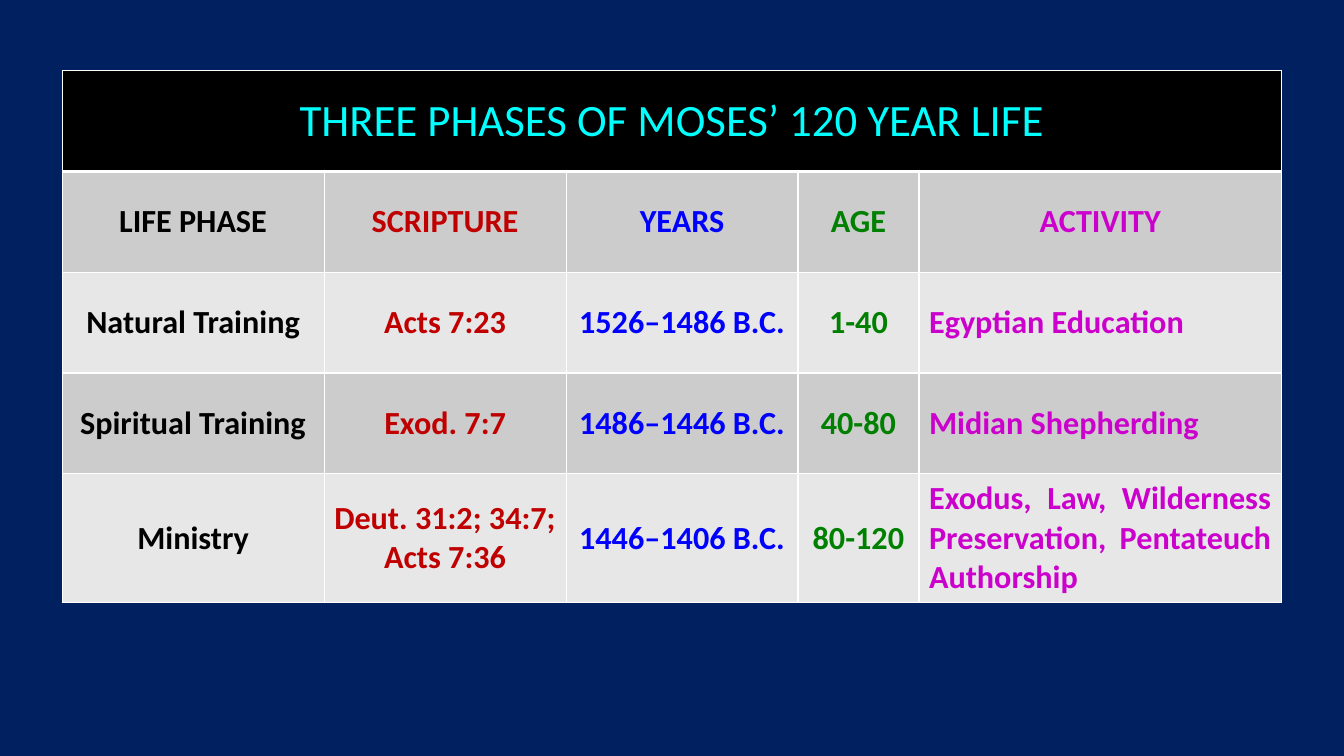
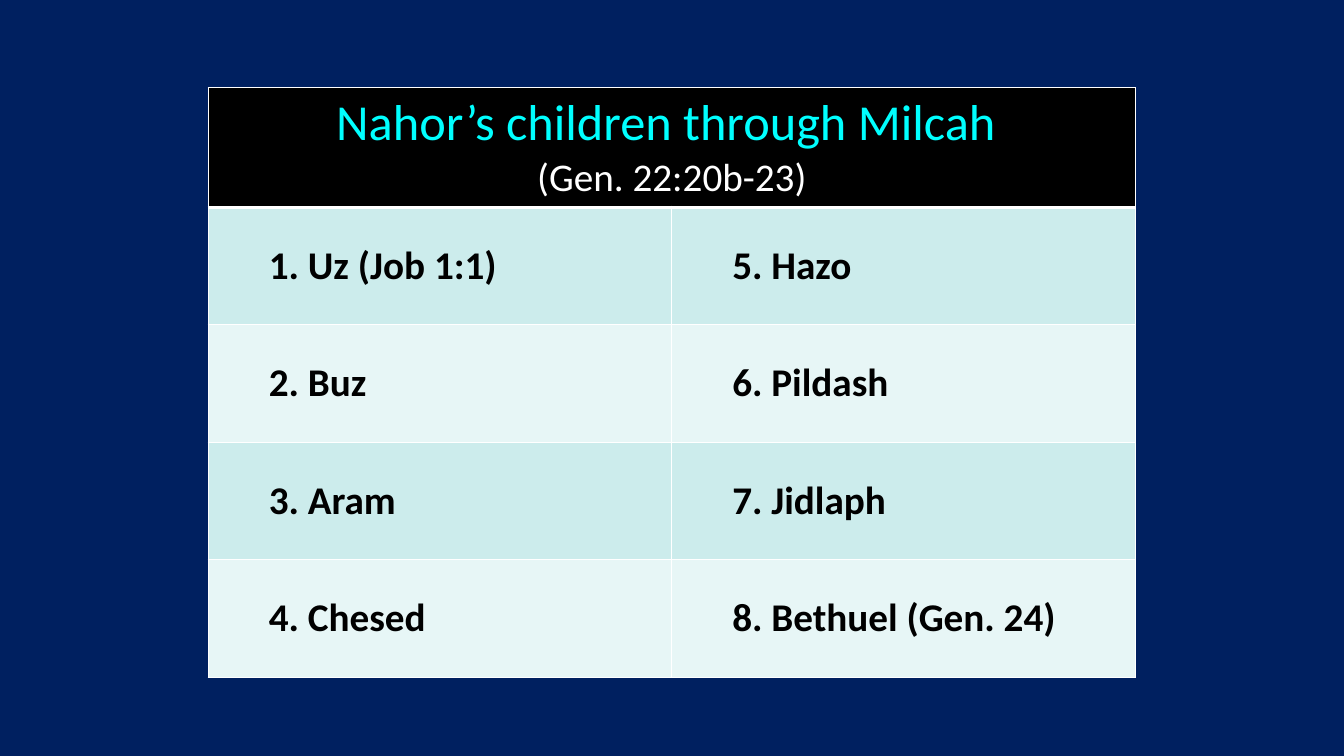
from dataclasses import dataclass

from lxml.etree import SubElement
from pptx import Presentation
from pptx.dml.color import RGBColor
from pptx.enum.text import MSO_ANCHOR as Anchor, PP_ALIGN as Align
from pptx.oxml.ns import qn
from pptx.util import Cm, Pt

NAVY = RGBColor(0x00, 0x20, 0x60)
BLACK = RGBColor(0x00, 0x00, 0x00)
WHITE = RGBColor(0xFF, 0xFF, 0xFF)
CYAN = RGBColor(0x00, 0xFF, 0xFF)
RED = RGBColor(0xC0, 0x00, 0x00)
BLUE = RGBColor(0x00, 0x00, 0xFF)
GREEN = RGBColor(0x00, 0x80, 0x00)
MAGENTA = RGBColor(0xCC, 0x00, 0xCC)
GREY_BANDS = (RGBColor(0xCC, 0xCC, 0xCC), RGBColor(0xE7, 0xE7, 0xE7))
TEAL_BANDS = (RGBColor(0xCC, 0xEC, 0xEC), RGBColor(0xE7, 0xF6, 0xF6))

FONT = "Calibri"
THIN, THICK = Pt(1), Pt(3)
BLANK_LAYOUT = 6


@dataclass(frozen=True)
class HeadingLine:
    text: str
    size: int
    color: RGBColor


@dataclass(frozen=True)
class Column:
    width: float
    color: RGBColor = BLACK
    align: Align = Align.CENTER


@dataclass(frozen=True)
class TableSpec:
    """One slide's table; lengths are in centimetres, sizes in points."""
    left: float
    top: float
    row_height: float
    columns: tuple[Column, ...]
    heading: tuple[HeadingLine, ...]
    rows: tuple[tuple[str, ...], ...]
    bands: tuple[RGBColor, RGBColor]
    text_size: int
    indent: float = 0
    space_after: int = 0
    has_labels: bool = False


MOSES = TableSpec(
    left=1.57, top=1.78, row_height=2.54,
    columns=(Column(6.6), Column(6.1, RED), Column(5.84, BLUE),
             Column(3.05, GREEN), Column(9.14, MAGENTA, Align.JUSTIFY)),
    heading=(HeadingLine("THREE PHASES OF MOSES’ 120 YEAR LIFE", 32, CYAN),),
    rows=(
        ("LIFE PHASE", "SCRIPTURE", "YEARS", "AGE", "ACTIVITY"),
        ("Natural Training", "Acts 7:23", "1526–1486 B.C.", "1-40",
         "Egyptian Education"),
        ("Spiritual Training", "Exod. 7:7", "1486–1446 B.C.", "40-80",
         "Midian Shepherding"),
        ("Ministry", "Deut. 31:2; 34:7; \nActs 7:36", "1446–1406 B.C.", "80-120",
         "Exodus, Law, Wilderness Preservation, Pentateuch Authorship"),
    ),
    bands=GREY_BANDS, text_size=23, has_labels=True,
)

NAHOR = TableSpec(
    left=5.25, top=2.21, row_height=2.96,
    columns=(Column(11.68, align=Align.LEFT),) * 2,
    heading=(HeadingLine("Nahor’s children through Milcah ", 36, CYAN),
             HeadingLine("(Gen. 22:20b-23)", 28, WHITE)),
    rows=(
        ("1. Uz (Job 1:1)", "5. Hazo"),
        ("2. Buz", "6. Pildash"),
        ("3. Aram", "7. Jidlaph"),
        ("4. Chesed", "8. Bethuel (Gen. 24)"),
    ),
    bands=TEAL_BANDS, text_size=28, indent=1.27, space_after=12,
)


def style_cell(cell, fill: RGBColor, top: int = THIN, bottom: int = THIN) -> None:
    """Set borders before the fill, as the schema orders them."""
    properties = cell._tc.get_or_add_tcPr()
    for side, width in (("L", THIN), ("R", THIN), ("T", top), ("B", bottom)):
        border = SubElement(properties, qn(f"a:ln{side}"), w=str(width))
        solid = SubElement(border, qn("a:solidFill"))
        SubElement(solid, qn("a:srgbClr"), val=str(WHITE))
    cell.fill.solid()
    cell.fill.fore_color.rgb = fill
    cell.vertical_anchor = Anchor.MIDDLE


def write_heading(cell, lines: tuple[HeadingLine, ...]) -> None:
    paragraph = cell.text_frame.paragraphs[0]
    paragraph.alignment = Align.CENTER
    paragraph.font.name = FONT
    for index, line in enumerate(lines):
        if index:
            paragraph.add_line_break()
        run = paragraph.add_run()
        run.text = line.text
        run.font.name = FONT
        run.font.size = Pt(line.size)
        run.font.bold = False
        run.font.color.rgb = line.color


def write_body(cell, text: str, color: RGBColor, align: Align, spec: TableSpec) -> None:
    cell.text = text
    for paragraph in cell.text_frame.paragraphs:
        paragraph.alignment = align
        if spec.indent:
            paragraph.level = 1
            paragraph._p.get_or_add_pPr().set("marL", str(Cm(spec.indent)))
        if spec.space_after:
            paragraph.space_after = Pt(spec.space_after)
        font = paragraph.font
        font.name, font.size, font.bold = FONT, Pt(spec.text_size), True
        font.color.rgb = color


def add_table_slide(deck, spec: TableSpec) -> None:
    slide = deck.slides.add_slide(deck.slide_layouts[BLANK_LAYOUT])
    row_count = len(spec.rows) + 1
    width = sum(column.width for column in spec.columns)
    table = slide.shapes.add_table(
        row_count, len(spec.columns), Cm(spec.left), Cm(spec.top),
        Cm(width), Cm(spec.row_height * row_count)).table
    table.horz_banding = False
    for grid_column, column in zip(table.columns, spec.columns):
        grid_column.width = Cm(column.width)
    for row in table.rows:
        row.height = Cm(spec.row_height)

    for cell in table.rows[0].cells:
        style_cell(cell, BLACK, bottom=THICK)
    heading = table.cell(0, 0)
    heading.merge(table.cell(0, len(spec.columns) - 1))
    write_heading(heading, spec.heading)

    for r, texts in enumerate(spec.rows):
        is_label = spec.has_labels and r == 0
        for c, (text, column) in enumerate(zip(texts, spec.columns)):
            cell = table.cell(r + 1, c)
            style_cell(cell, spec.bands[r % 2], top=THIN if r else THICK)
            align = Align.CENTER if is_label else column.align
            write_body(cell, text, column.color, align, spec)


def main() -> None:
    deck = Presentation()
    deck.slide_width, deck.slide_height = Cm(33.87), Cm(19.05)
    background = deck.slide_master.background.fill
    background.solid()
    background.fore_color.rgb = NAVY
    for spec in (MOSES, NAHOR):
        add_table_slide(deck, spec)
    deck.save("out.pptx")


if __name__ == "__main__":
    main()
